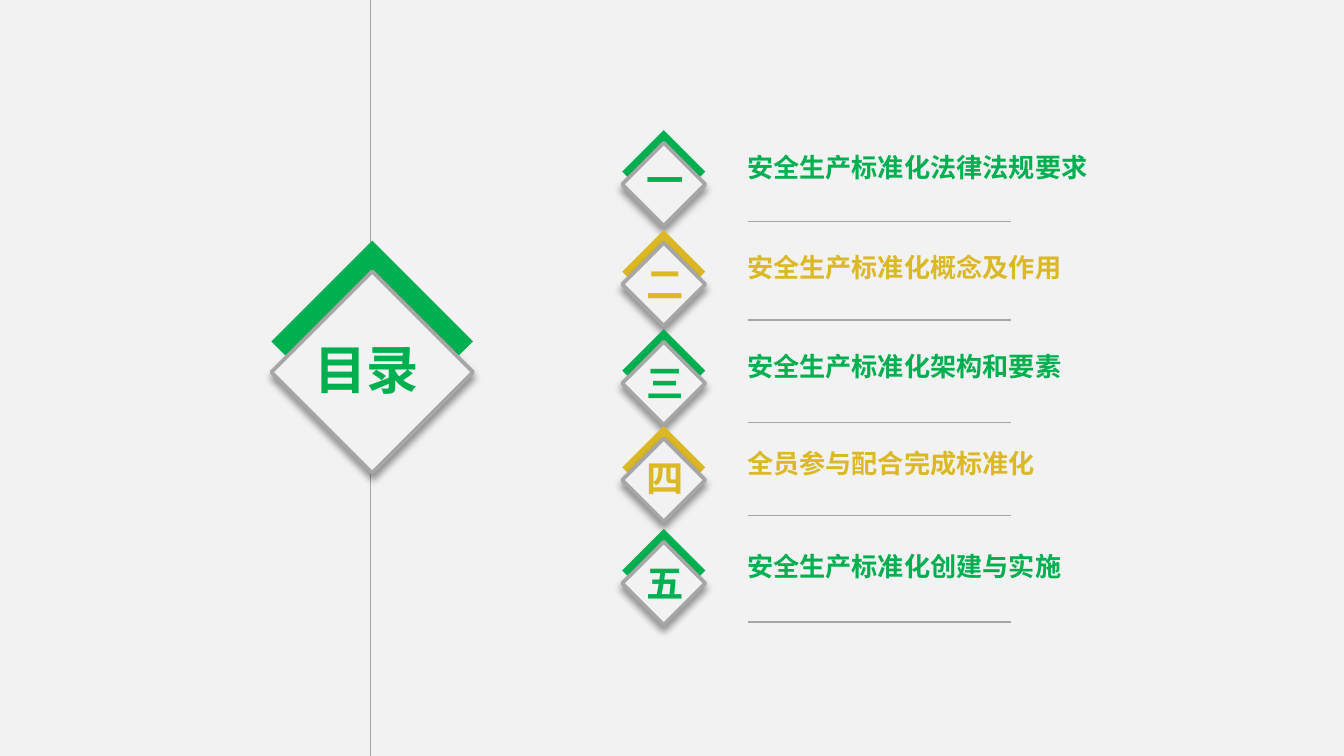
import lxml.etree
import pptx
import pptx.dml.color
import pptx.enum.shapes
import pptx.enum.text
import pptx.oxml
import pptx.oxml.ns
import pptx.util

Cm = pptx.util.Cm
Pt = pptx.util.Pt
RGBColor = pptx.dml.color.RGBColor

GREEN = RGBColor(0x00, 0xB0, 0x50)
GOLD = RGBColor(0xDB, 0xB8, 0x25)
GREY = RGBColor(0xA6, 0xA6, 0xA6)
PALE = RGBColor(0xF2, 0xF2, 0xF2)

CJK_FONT = "Noto Sans CJK SC"
NUMERAL_FONT = "Cabin"
TIGHT_INSETS = (0.18, 0.1)
NORMAL_INSETS = (0.25, 0.13)

ENTRY_LEFT = 11.76
# Numeral, title, then the tops of the entry, its numeral and its rule in cm
ENTRIES = [
    ("一", "安全生产标准化法律法规要求", 2.46, 2.84, 4.19),
    ("二", "安全生产标准化概念及作用", 4.35, 4.8, 6.05),
    ("三", "安全生产标准化架构和要素", 6.22, 6.68, 7.99),
    ("四", "全员参与配合完成标准化", 8.05, 8.48, 9.74),
    ("五", "安全生产标准化创建与实施", 10, 10.46, 11.76),
]


def add_soft_shadow(shape):
    shadow = pptx.oxml.parse_xml(
        f'<a:effectLst {pptx.oxml.ns.nsdecls("a")}>'
        '<a:outerShdw blurRad="50800" dist="38100" dir="5400000" algn="t" rotWithShape="0">'
        '<a:srgbClr val="000000"><a:alpha val="40000"/></a:srgbClr>'
        '</a:outerShdw></a:effectLst>'
    )
    properties = shape.fill._xPr
    for effects in properties.findall(pptx.oxml.ns.qn("a:effectLst")):
        properties.remove(effects)
    properties.find(pptx.oxml.ns.qn("a:ln")).addnext(shadow)


def add_diamond(shapes, left, top, size, colour):
    diamond = shapes.add_shape(
        pptx.enum.shapes.MSO_SHAPE.FLOWCHART_DECISION,
        Cm(left), Cm(top), Cm(size), Cm(size),
    )
    diamond.shadow.inherit = False
    diamond.fill.solid()
    diamond.fill.fore_color.rgb = colour
    diamond.line.fill.background()
    return diamond


def add_badge(shapes, left, top, size, drop, colour):
    """Place a coloured diamond with a framed pale one lying lower over it."""
    add_diamond(shapes, left, top, size, colour)
    face = add_diamond(shapes, left, top + drop, size, PALE)
    face.line.color.rgb = GREY
    face.line.width = Pt(2)
    add_soft_shadow(face)


def add_rule(shapes, left, top, right, bottom):
    rule = shapes.add_connector(
        pptx.enum.shapes.MSO_CONNECTOR.STRAIGHT,
        Cm(left), Cm(top), Cm(right), Cm(bottom),
    )
    rule.line.color.rgb = GREY
    rule.line.width = Pt(0.75)
    properties = rule.line._get_or_add_ln().getparent()
    lxml.etree.SubElement(properties, pptx.oxml.ns.qn("a:effectLst"))


def add_label(shapes, text, left, top, width, height, size, colour,
              font=CJK_FONT, insets=TIGHT_INSETS):
    box = shapes.add_textbox(Cm(left), Cm(top), Cm(width), Cm(height))
    frame = box.text_frame
    frame.word_wrap = False
    frame.auto_size = pptx.enum.text.MSO_AUTO_SIZE.SHAPE_TO_FIT_TEXT
    frame.margin_left = frame.margin_right = Cm(insets[0])
    frame.margin_top = frame.margin_bottom = Cm(insets[1])
    span = frame.paragraphs[0].add_run()
    span.text = text
    span.font.size = Pt(size)
    span.font.bold = True
    span.font.color.rgb = colour
    span.font.name = font
    east_asian = lxml.etree.SubElement(
        span.font._element, pptx.oxml.ns.qn("a:ea"))
    east_asian.set("typeface", CJK_FONT)


def add_heading(shapes, left, top, size, page_height):
    axis = left + size / 2 - 0.03
    add_rule(shapes, axis, 0, axis, page_height)
    add_badge(shapes, left, top, size, 0.58, GREEN)
    add_label(shapes, "目录", left + 0.64, top + 1.73, 2.36, 1.37, 28, GREEN)


def add_entry(shapes, left, entry, colour):
    numeral, title, top, numeral_top, rule_top = entry
    title_left = left + 2.18
    rule_left = left + 2.38
    add_label(shapes, title, title_left, top + 0.3,
              0.5 * len(title) + 0.36, 0.79, 14, colour)
    add_rule(shapes, rule_left, rule_top, rule_left + 4.96, rule_top)
    add_badge(shapes, left, top, 1.57, 0.24, colour)
    add_label(shapes, numeral, left + 0.2, numeral_top, 1.22, 1.12, 20, colour,
              NUMERAL_FONT, NORMAL_INSETS)


def add_contents_page(deck):
    page = deck.slides.add_slide(deck.slide_layouts[6])
    page.background.fill.solid()
    page.background.fill.fore_color.rgb = PALE
    add_heading(page.shapes, 5.13, 4.55, 3.81, deck.slide_height.cm)
    for index, entry in enumerate(ENTRIES):
        group = page.shapes.add_group_shape()
        add_entry(group.shapes, ENTRY_LEFT, entry, (GREEN, GOLD)[index % 2])


def main():
    deck = pptx.Presentation()
    deck.slide_width = Cm(25.4)
    deck.slide_height = Cm(14.29)
    add_contents_page(deck)
    deck.save("out.pptx")


if __name__ == "__main__":
    main()
